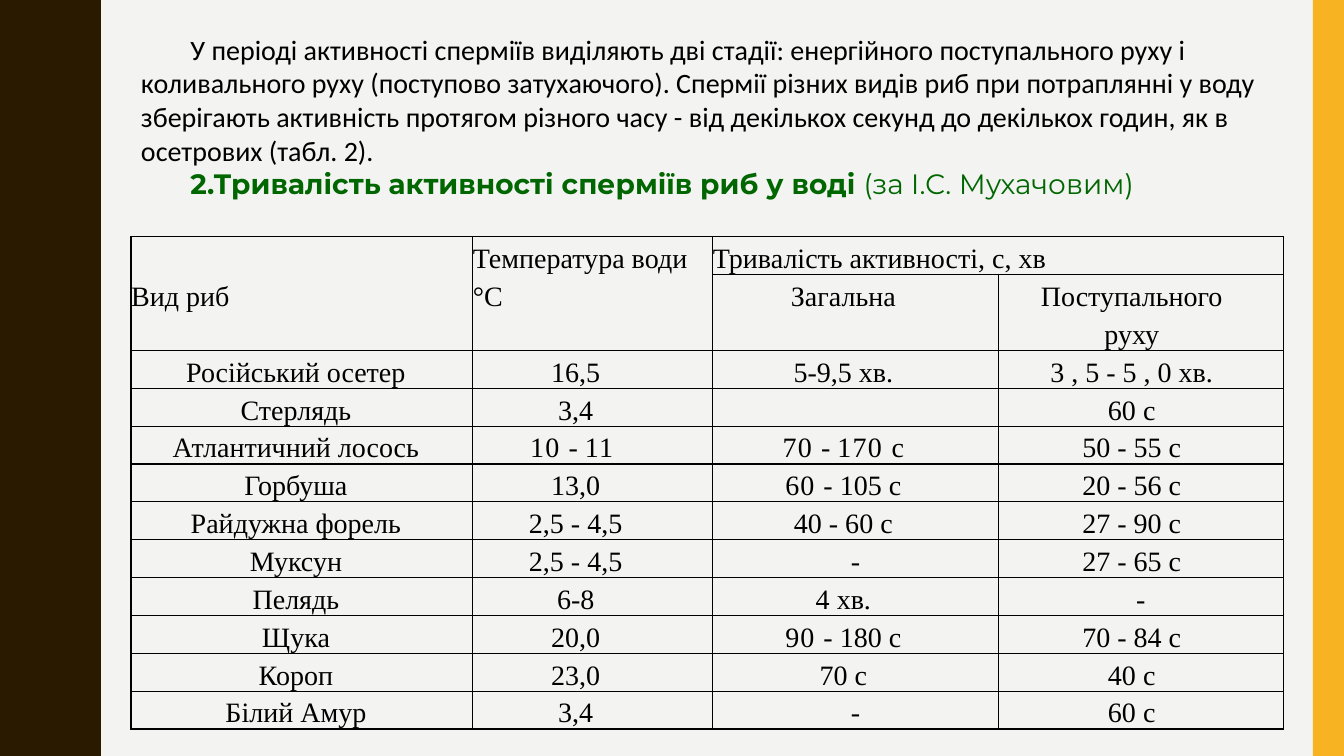
"""Build the slide on how long fish sperm stays active in water."""
from lxml import etree
from pptx import Presentation, util as u
from pptx.dml.color import RGBColor
from pptx.enum import shapes, text
from pptx.oxml import ns

COLORS = {"ground": "F3F3F2", "wave": "2A1A00", "band": "F8B323",
          "ink": "000000", "heading": "006600"}
WIDTH, HEIGHT = 13.33, 7.5

INTRO = ("У періоді активності сперміїв виділяють дві стадії: енергійного поступального руху і "
         "коливального руху (поступово затухаючого). Спермії різних видів риб при потраплянні "
         "у воду зберігають активність протягом різного часу - від декількох секунд до "
         "декількох годин, як в осетрових (табл. 2).")
HEADING = [("2.Тривалість активності сперміїв риб у воді ", True),
           ("(за І.С. Мухачовим)", False)]

HEADERS = [["Вид риб", "Температура води °С", "Тривалість активності, с, хв", None],
           [None, None, "Загальна", "Поступального\nруху"]]
FISH = [
    ["Російський осетер", "16,5", "5-9,5 хв.", "3 , 5 - 5 , 0 хв."],
    ["Стерлядь", "3,4", "", "60 с"],
    ["Атлантичний лосось", [("10 ", 0.8), ("- ", 0), ("11 ", 0.8)],
     [("70 ", 0.8), ("- ", 0), ("170 ", 0.9), ("с", 0)], "50 - 55 с"],
    ["Горбуша", "13,0", [("60 ", 0.7), ("- 105 с", 0)], "20 - 56 с"],
    ["Райдужна форель", "2,5 - 4,5", "40 - 60 с", "27 - 90 с"],
    ["Муксун", "2,5 - 4,5", "-", "27 - 65 с"],
    ["Пелядь", "6-8", "4 хв.", "-"],
    ["Щука", "20,0", [("90 ", 0.7), ("- 180 с", 0)], "70 - 84 с"],
    ["Короп", "23,0", "70 с", "40 с"],
    ["Білий Амур", "3,4", "-", "60 с"],
]
COLUMN_WIDTHS = [3.39, 2.38, 2.83, 2.83]
RIGHT_MARGINS = [0.12, 0.34, 0.24, 0.18]
ROW_HEIGHT = 0.375
ROW_LINES = [1, 2] + [1] * len(FISH)
MERGES = [((0, 0), (1, 0)), ((0, 1), (1, 1)), ((0, 2), (0, 3))]

WAVE_PERIOD = 1.5
HALF_WAVE = [(0.78, 0), (0.78, 0.07), (0.79, 0.14), (0.8, 0.2), (0.81, 0.25),
             (0.83, 0.29), (0.85, 0.33), (0.87, 0.38), (0.89, 0.42), (0.91, 0.46),
             (0.93, 0.5), (0.95, 0.55), (0.96, 0.61), (0.97, 0.68)]


def color(name):
    return RGBColor.from_string(COLORS[name])


def paint(shape, name):
    shape.shadow.inherit = False
    shape.fill.solid()
    shape.fill.fore_color.rgb = color(name)
    shape.line.fill.background()


def set_font(font, name, ink):
    font.name, font.size = name, u.Pt(20)
    font.color.rgb = color(ink)


def add_wave(slide):
    falling = [(x, WAVE_PERIOD - y) for x, y in reversed(HALF_WAVE[1:])]
    period = HALF_WAVE + [(0.97, WAVE_PERIOD / 2)] + falling
    edge = [(x, y + turn * WAVE_PERIOD)
            for turn in range(round(HEIGHT / WAVE_PERIOD)) for x, y in period]
    builder = slide.shapes.build_freeform(0, 0, scale=u.Inches(1))
    builder.add_line_segments(edge + [(HALF_WAVE[0][0], HEIGHT), (0, HEIGHT)], close=True)
    paint(builder.convert_to_shape(), "wave")


def add_intro(slide):
    box = slide.shapes.add_textbox(*map(u.Inches, (1.3, 0.27, 11.29, 2.09)))
    frame = box.text_frame
    frame.word_wrap = True
    frame.vertical_anchor = text.MSO_ANCHOR.TOP
    intro, heading = frame.paragraphs[0], frame.add_paragraph()
    intro.text = INTRO
    set_font(intro.font, "Calibri", "ink")
    for words, bold in HEADING:
        run = heading.add_run()
        run.text, run.font.bold = words, bold
    set_font(heading.font, "Montserrat", "heading")
    for paragraph in frame.paragraphs:
        paragraph._p.get_or_add_pPr().set("indent", str(u.Inches(0.49)))


def add_borders(cell):
    properties = cell._tc.get_or_add_tcPr()
    for side in ("a:lnL", "a:lnR", "a:lnT", "a:lnB"):
        line = etree.SubElement(properties, ns.qn(side), w=str(u.Pt(1)))
        fill = etree.SubElement(line, ns.qn("a:solidFill"))
        etree.SubElement(fill, ns.qn("a:srgbClr"), val=COLORS["ink"])


def write_cell(cell, content, centred):
    if isinstance(content, str):
        cell.text = content
    else:
        for words, spacing in content:
            run = cell.text_frame.paragraphs[0].add_run()
            run.text = words
            run._r.get_or_add_rPr().set("spc", str(round(spacing * 100)))
    for paragraph in cell.text_frame.paragraphs:
        paragraph.line_spacing = u.Pt(27)
        set_font(paragraph.font, "Times New Roman", "ink")
        if centred:
            paragraph.alignment = text.PP_ALIGN.CENTER


def add_fish_table(slide):
    rows = HEADERS + FISH
    frame = slide.shapes.add_table(
        len(rows), len(COLUMN_WIDTHS), u.Inches(1.3), u.Inches(2.35),
        u.Inches(sum(COLUMN_WIDTHS)), u.Inches(ROW_HEIGHT * sum(ROW_LINES)))
    table = frame.table
    table.first_row = table.horz_banding = False
    for column, width in zip(table.columns, COLUMN_WIDTHS):
        column.width = u.Inches(width)
    for row, lines in zip(table.rows, ROW_LINES):
        row.height = u.Inches(ROW_HEIGHT * lines)
    for r, contents in enumerate(rows):
        for c, content in enumerate(contents):
            cell = table.cell(r, c)
            cell.margin_left = cell.margin_right = cell.margin_top = cell.margin_bottom = 0
            add_borders(cell)
            cell.fill.background()
            if content is None:
                continue
            write_cell(cell, content, centred=r > 0)
            if r > 0 and content != "-":
                cell.margin_right = u.Inches(RIGHT_MARGINS[c])
    for first, last in MERGES:
        table.cell(*first).merge(table.cell(*last))
    table.cell(0, 0).vertical_anchor = text.MSO_ANCHOR.MIDDLE


def main():
    presentation = Presentation()
    presentation.slide_width, presentation.slide_height = u.Inches(WIDTH), u.Inches(HEIGHT)
    slide = presentation.slides.add_slide(presentation.slide_layouts[6])
    slide.background.fill.solid()
    slide.background.fill.fore_color.rgb = color("ground")
    add_wave(slide)
    band = slide.shapes.add_shape(shapes.MSO_SHAPE.RECTANGLE, u.Inches(13.02), 0,
                                  u.Inches(WIDTH - 13.02), u.Inches(HEIGHT))
    paint(band, "band")
    add_fish_table(slide)
    add_intro(slide)
    presentation.save("out.pptx")


if __name__ == "__main__":
    main()
